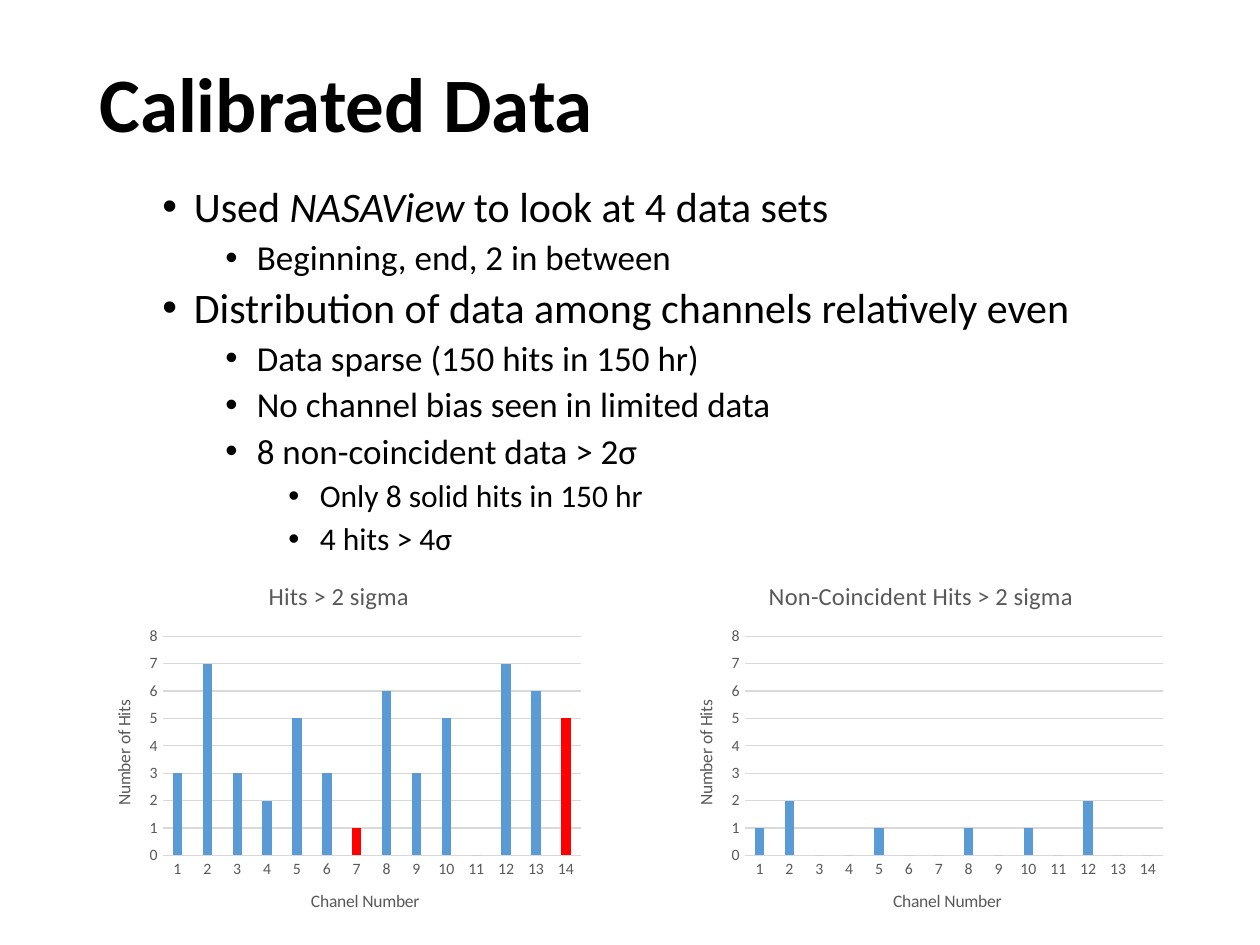
from dataclasses import dataclass

from lxml import etree
from pptx import Presentation
from pptx.chart.data import CategoryChartData
from pptx.dml.color import RGBColor
from pptx.enum.chart import XL_CHART_TYPE, XL_TICK_MARK
from pptx.enum.text import MSO_ANCHOR
from pptx.oxml import parse_xml
from pptx.oxml.ns import nsdecls, qn
from pptx.util import Inches, Pt

COLUMN = XL_CHART_TYPE.COLUMN_CLUSTERED
NO_TICK = XL_TICK_MARK.NONE
MIDDLE, TOP = MSO_ANCHOR.MIDDLE, MSO_ANCHOR.TOP

FONT = "Calibri"
BLACK = RGBColor(0x00, 0x00, 0x00)
GREY = RGBColor(0x59, 0x59, 0x59)
GRID = RGBColor(0xD9, 0xD9, 0xD9)
BLUE = RGBColor(0x5B, 0x9B, 0xD5)
RED = RGBColor(0xFF, 0x00, 0x00)

LEFT, WIDTH = 0.69, 8.62
CHART_TOP, CHART_WIDTH, CHART_HEIGHT = 4.45, 4, 3
LEVEL_SIZES = {1: 24, 2: 20, 3: 18}
PLOT_LAYOUT = {"x": 0.15, "y": 0.2, "w": 0.83, "h": 0.58}


@dataclass
class Bullet:
    level: int
    text: str
    italic: str = ""
    rest: str = ""


@dataclass
class HitChart:
    left: float
    title: str
    hits: list[int]
    red_channels: tuple[int, ...] = ()


BULLETS = [
    Bullet(1, "Used ", "NASAView", " to look at 4 data sets"),
    Bullet(2, "Beginning, end, 2 in between"),
    Bullet(1, "Distribution of data among channels relatively even"),
    Bullet(2, "Data sparse (150 hits in 150 hr)"),
    Bullet(2, "No channel bias seen in limited data"),
    Bullet(2, "8 non-coincident data > 2σ"),
    Bullet(3, "Only 8 solid hits in 150 hr"),
    Bullet(3, "4 hits > 4σ"),
]

CHARTS = [
    HitChart(LEFT + WIDTH - CHART_WIDTH, "Non-Coincident Hits > 2 sigma",
             [1, 2, 0, 0, 1, 0, 0, 1, 0, 1, 0, 2, 0, 0]),
    HitChart(LEFT, "Hits > 2 sigma",
             [3, 7, 3, 2, 5, 3, 1, 6, 3, 5, 0, 7, 6, 5], (7, 14)),
]


def set_font(font, size: float, color: RGBColor, bold: bool = False, italic: bool = False) -> None:
    formats = {"name": FONT, "size": Pt(size), "bold": bold, "italic": italic}
    for name, value in formats.items():
        setattr(font, name, value)
    font.color.rgb = color


def add_text_frame(page, top: float, height: float, anchor):
    box = page.shapes.add_textbox(Inches(LEFT), Inches(top), Inches(WIDTH), Inches(height))
    frame = box.text_frame
    frame.word_wrap = True
    frame.vertical_anchor = anchor
    return frame


def add_title(page, text: str) -> None:
    para = add_text_frame(page, 0.4, 0.91, MIDDLE).paragraphs[0]
    para.line_spacing = 0.9
    span = para.add_run()
    span.text = text
    set_font(span.font, 44, BLACK, bold=True)


def add_bullets(page, bullets: list[Bullet]) -> None:
    frame = add_text_frame(page, 1.43, 3.23, TOP)
    for index, bullet in enumerate(bullets):
        para = frame.add_paragraph() if index else frame.paragraphs[0]
        para.level = bullet.level
        para.line_spacing = 0.9
        para.space_before = Pt(5 if index else 0)
        properties = para._p.get_or_add_pPr()
        properties.set("marL", str(Inches(0.25 + 0.5 * bullet.level)))
        properties.set("indent", str(Inches(-0.25)))
        etree.SubElement(properties, qn("a:buFont")).set("typeface", "Arial")
        etree.SubElement(properties, qn("a:buChar")).set("char", "•")
        for text in filter(None, (bullet.text, bullet.italic, bullet.rest)):
            span = para.add_run()
            span.text = text
            set_font(span.font, LEVEL_SIZES[bullet.level], BLACK, italic=text == bullet.italic)


def set_heading(owner, text: str, size: float) -> None:
    """Write the title of a chart or of an axis."""
    frame = owner.text_frame
    frame.text = text
    set_font(frame.paragraphs[0].runs[0].font, size, GREY)


def set_line(line, color: RGBColor) -> None:
    line.color.rgb = color
    line.width = Pt(0.75)


def set_plot_layout(chart) -> None:
    """Fix the inner plot area as fractions of the chart."""
    area = chart._chartSpace.find(".//" + qn("c:plotArea"))
    for old in area.findall(qn("c:layout")):
        area.remove(old)
    modes = "".join(f'<c:{key}Mode val="edge"/>' for key in "xy")
    sizes = "".join(f'<c:{key} val="{value}"/>' for key, value in PLOT_LAYOUT.items())
    area.insert(0, parse_xml(
        f'<c:layout {nsdecls("c")}><c:manualLayout><c:layoutTarget val="inner"/>'
        f"{modes}{sizes}</c:manualLayout></c:layout>"))


def add_hit_chart(page, item: HitChart) -> None:
    data = CategoryChartData()
    data.categories = [str(channel) for channel in range(1, len(item.hits) + 1)]
    data.add_series("Series 1", item.hits)
    chart = page.shapes.add_chart(
        COLUMN, Inches(item.left), Inches(CHART_TOP),
        Inches(CHART_WIDTH), Inches(CHART_HEIGHT), data).chart
    set_font(chart.font, 10, BLACK)
    chart.has_legend = False
    chart.has_title = True
    set_heading(chart.chart_title, item.title, 14)
    chart.chart_title.include_in_layout = False

    channels, counts = chart.category_axis, chart.value_axis
    for axis, name in ((channels, "Chanel Number"), (counts, "Number of Hits")):
        axis.major_tick_mark = axis.minor_tick_mark = NO_TICK
        set_font(axis.tick_labels.font, 9, GREY)
        set_heading(axis.axis_title, name, 10)
    set_line(channels.format.line, GRID)
    set_line(counts.major_gridlines.format.line, GRID)
    counts.format.line.fill.background()
    for name, value in {"minimum_scale": 0, "maximum_scale": 8, "major_unit": 1}.items():
        setattr(counts, name, value)

    plot = chart.plots[0]
    for name, value in {"gap_width": 219, "overlap": -27, "vary_by_categories": False}.items():
        setattr(plot, name, value)
    series = plot.series[0]
    series.format.fill.solid()
    series.format.fill.fore_color.rgb = BLUE
    for channel in item.red_channels:
        fill = series.points[channel - 1].format.fill
        fill.solid()
        fill.fore_color.rgb = RED
    set_plot_layout(chart)


def main() -> None:
    deck = Presentation()
    deck.slide_width, deck.slide_height = Inches(10), Inches(7.5)
    page = deck.slides.add_slide(deck.slide_layouts[6])
    add_title(page, "Calibrated Data")
    add_bullets(page, BULLETS)
    for item in CHARTS:
        add_hit_chart(page, item)
    deck.save("out.pptx")


if __name__ == "__main__":
    main()
